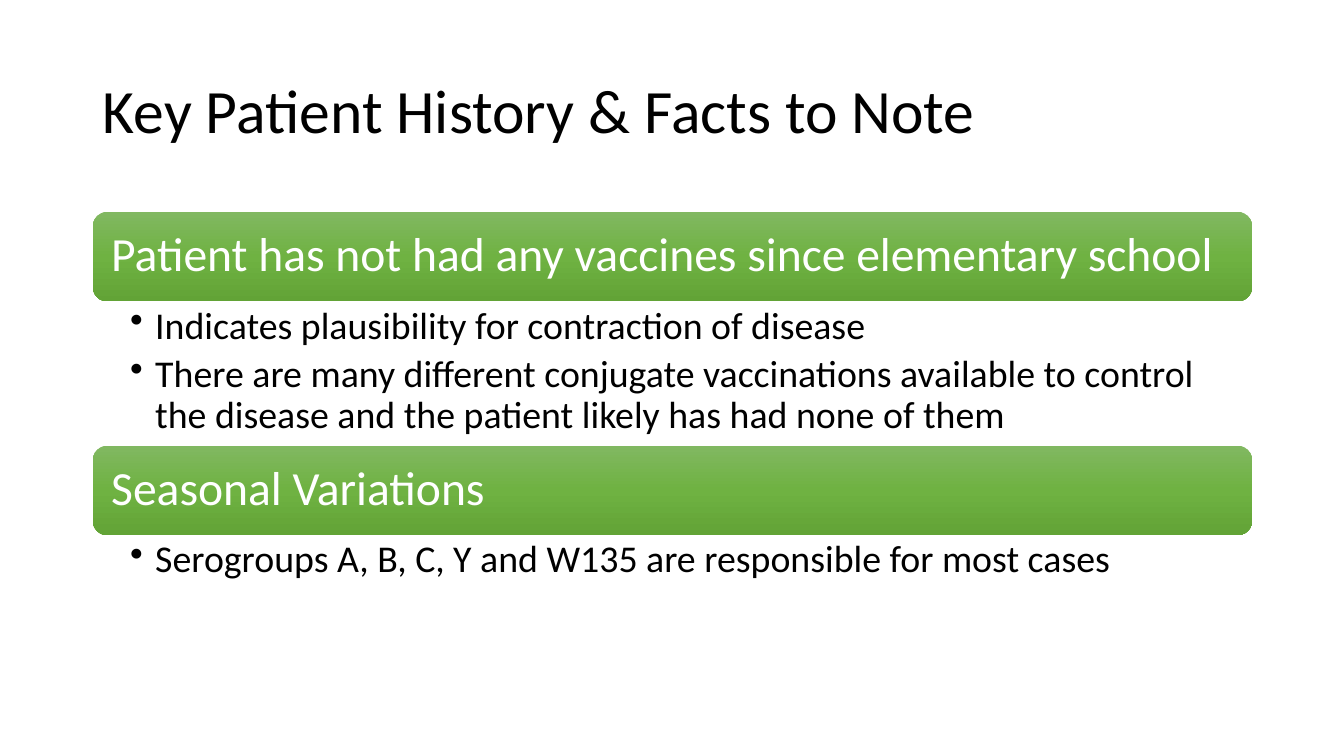
import copy

import pptx
import pptx.dml.color
import pptx.enum.shapes
import pptx.enum.text
import pptx.oxml.ns
import pptx.util
from pptx.util import Inches

COLORS = {
    "text": "000000",
    "banner_text": "FFFFFF",
    "banner_top": "81B861",
    "banner_middle": "6FB242",
    "banner_bottom": "62A336",
}
LEFT, WIDTH, BANNER_HEIGHT = 0.92, 11.5, 0.89

# Each section: banner top, heading, height of the list, list items
SECTIONS = [
    (2.1, "Patient has not had any vaccines since elementary school", 1.42, [
        "Indicates plausibility for contraction of disease",
        "There are many different conjugate vaccinations available to control "
        "the disease and the patient likely has had none of them",
    ]),
    (4.42, "Seasonal Variations", 0.62, [
        "Serogroups A, B, C, Y and W135 are responsible for most cases",
    ]),
]


def write(para, text, size, color="text", space_after=0, bullet=False):
    """Fill a paragraph with one formatted run."""
    para.alignment = pptx.enum.text.PP_ALIGN.LEFT
    para.line_spacing = 0.9
    para.space_after = pptx.util.Pt(space_after)
    span = para.add_run()
    span.text = text
    span.font.name = "Calibri"
    span.font.size = pptx.util.Pt(size)
    span.font.color.rgb = pptx.dml.color.RGBColor.from_string(COLORS[color])
    if bullet:
        para.level = 1
        properties = para._p.get_or_add_pPr()
        properties.set("marL", str(Inches(0.25)))
        properties.set("indent", str(Inches(-0.25)))
        mark = properties.makeelement(pptx.oxml.ns.qn("a:buChar"), {"char": "•"})
        properties.append(mark)


def set_frame(frame, left, right, vertical, anchor):
    """Set wrapping, insets and anchor of a text frame."""
    frame.word_wrap = True
    frame.margin_left, frame.margin_right = Inches(left), Inches(right)
    frame.margin_top = frame.margin_bottom = Inches(vertical)
    frame.vertical_anchor = anchor


deck = pptx.Presentation()
deck.slide_width, deck.slide_height = Inches(13.33), Inches(7.5)
page = deck.slides.add_slide(deck.slide_layouts[5])
anchors = pptx.enum.text.MSO_ANCHOR

# Title
title = page.shapes.title
title.left, title.top = Inches(LEFT), Inches(0.4)
title.width, title.height = Inches(WIDTH), Inches(1.45)
set_frame(title.text_frame, 0.1, 0.1, 0.05, anchors.MIDDLE)
write(title.text_frame.paragraphs[0], "Key Patient History & Facts to Note", 44)

for top, heading, list_height, items in SECTIONS:
    # Banner with a three-stop vertical gradient
    banner = page.shapes.add_shape(
        pptx.enum.shapes.MSO_SHAPE.ROUNDED_RECTANGLE,
        Inches(LEFT), Inches(top), Inches(WIDTH), Inches(BANNER_HEIGHT))
    banner.shadow.inherit = False
    banner.line.fill.background()
    banner.fill.gradient()
    banner.fill.gradient_angle = 270
    stop_list = banner._element.spPr.find(".//" + pptx.oxml.ns.qn("a:gsLst"))
    stop_list.insert(1, copy.deepcopy(stop_list[0]))
    for index, name in enumerate(("banner_top", "banner_middle", "banner_bottom")):
        stop = banner.fill.gradient_stops[index]
        stop.position = index / 2
        stop.color.rgb = pptx.dml.color.RGBColor.from_string(COLORS[name])
    set_frame(banner.text_frame, 0.14, 0.14, 0.14, anchors.MIDDLE)
    write(banner.text_frame.paragraphs[0], heading, 34, color="banner_text")

    # Bulleted list below the banner
    box = page.shapes.add_textbox(
        Inches(LEFT), Inches(top + BANNER_HEIGHT), Inches(WIDTH), Inches(list_height))
    set_frame(box.text_frame, 0.37, 0.26, 0.05, anchors.TOP)
    for index, item in enumerate(items):
        para = box.text_frame.add_paragraph() if index else box.text_frame.paragraphs[0]
        write(para, item, 27, space_after=5.4, bullet=True)

deck.save("out.pptx")
